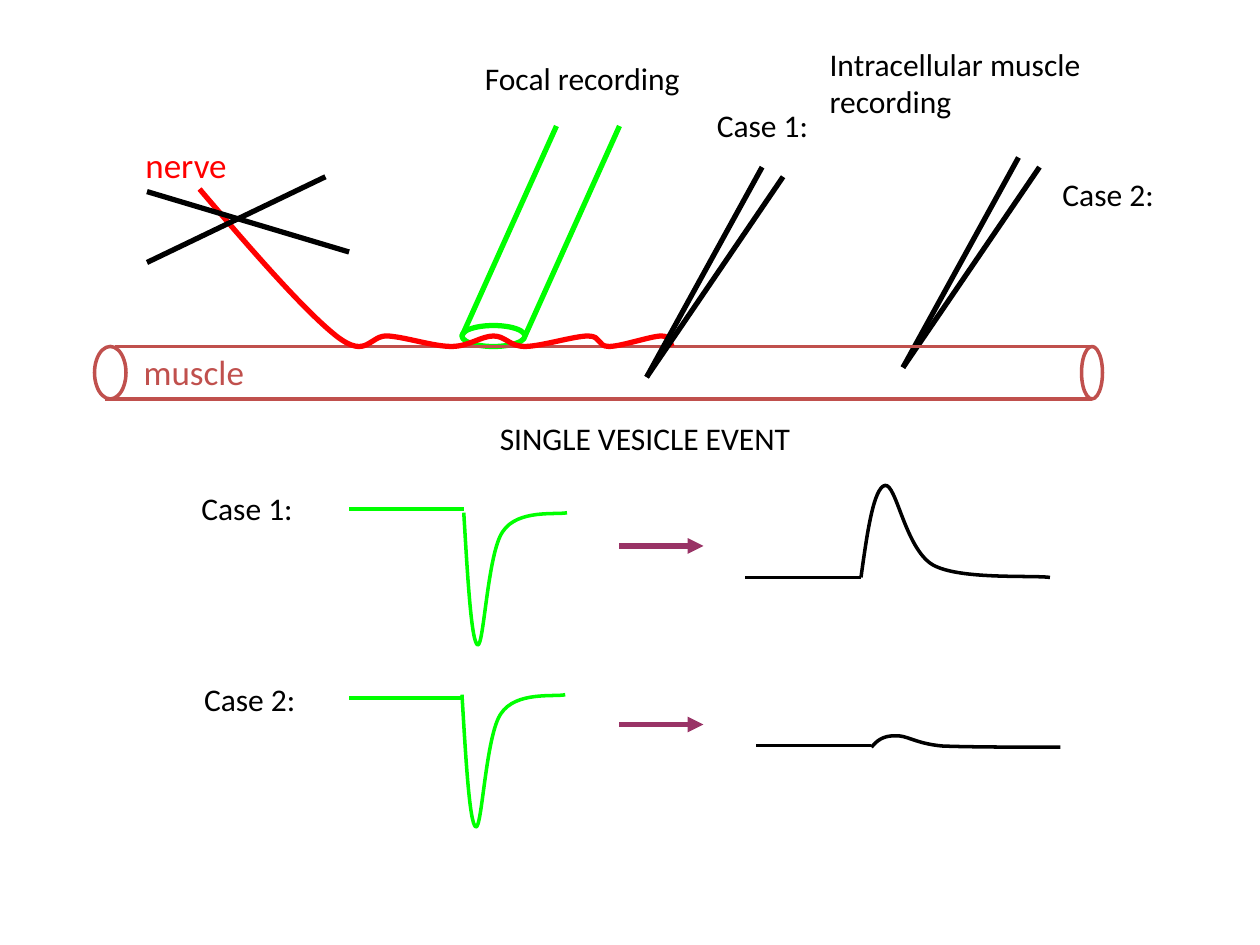
from dataclasses import dataclass

from lxml.etree import SubElement
from pptx import Presentation
from pptx.dml.color import RGBColor
from pptx.enum.shapes import MSO_CONNECTOR as Connector, MSO_SHAPE as Shape
from pptx.enum.text import MSO_AUTO_SIZE as AutoSize
from pptx.oxml.ns import qn
from pptx.slide import Slide
from pptx.util import Pt

Point = tuple[float, float]

COLORS = {
    "ink": "000000",
    "focal": "00FF00",
    "nerve": "FF0000",
    "muscle": "C0504D",
    "arrow": "993366",
}


@dataclass(frozen=True)
class Label:
    text: str
    left: float
    top: float
    width: float
    height: float = 29
    size: float = 18
    color: str = "ink"


@dataclass(frozen=True)
class Line:
    start: Point
    end: Point
    color: str = "ink"
    width: float = 3
    arrow: bool = False


@dataclass(frozen=True)
class Ellipse:
    left: float
    top: float
    width: float
    height: float
    color: str
    line_width: float


@dataclass(frozen=True)
class Curve:
    start: Point
    offsets: tuple[Point, ...]
    color: str
    width: float = 2


@dataclass(frozen=True)
class Trace:
    baseline: Point
    curve: Curve


FOCAL_SPIKE = (
    (2.2, 36.8), (4.3, 73.5), (7.9, 75.6),
    (11.5, 77), (13.6, 23), (22.3, 10.8),
    (30.9, -2.2), (53.2, 1.4), (59, 0),
)
LARGE_RESPONSE = (
    (3.6, -26), (7.2, -51), (13.7, -52.6),
    (20.2, -54), (25.2, -16.6), (41, -7.2),
    (56.2, 1.4), (97.2, -1.4), (108, 0),
)
SMALL_RESPONSE = (
    (2.9, -3.6), (6.5, -6.5), (13, -6.5),
    (20.2, -7.2), (24.5, -2.2), (40.3, -0.7),
    (56.2, 0), (96.5, 0), (108, 0),
)
NERVE_PATH = (
    (30, 35.3), (60.2, 69.8), (78.2, 84),
    (96.2, 98), (97, 83), (108, 84),
    (119.3, 85), (133.7, 90), (144, 90),
    (154, 90), (161, 84), (168, 84),
    (175, 84), (177, 90), (186, 90),
    (195, 90), (214, 84), (222, 84),
    (230, 84), (227, 90), (234, 90),
    (241, 90), (258, 84), (264, 84),
    (270, 84), (269, 89.3), (270, 90),
)

TRACES = (
    Trace((199.5, 291), Curve((265, 293), FOCAL_SPIKE, "focal")),
    Trace((199.5, 399), Curve((264, 397), FOCAL_SPIKE, "focal")),
    Trace((426, 330), Curve((492, 330), LARGE_RESPONSE, "ink")),
    Trace((432, 426), Curve((498, 427), SMALL_RESPONSE, "ink")),
)
ARROWS = tuple(Line((354, y), (402, y), "arrow", arrow=True) for y in (312, 414))
PIPETTE = (
    Ellipse(264, 186, 36, 12, "focal", 3),
    *(Line((x, 192), (x + 54, 72), "focal") for x in (300, 264)),
)
MUSCLE = (
    Ellipse(54, 198, 18, 30, "muscle", 2),
    Line((66, 198), (624, 198), "muscle", 2),
    Line((60, 228), (624, 228), "muscle", 2),
    Ellipse(618, 198, 12, 30, "muscle", 2),
)
NERVE = Curve((114, 108), NERVE_PATH, "nerve", 3)
NERVE_CUT = (Line((186, 101), (84, 150)), Line((84, 109.5), (199.5, 144)))

LABELS = (
    Label("Focal recording", 270, 30, 138),
    Label("Intracellular muscle\nrecording", 467, 22, 169, 51),
    Label("Case 1:", 402.5, 57, 76),
    Label("Case 2:", 600, 96.5, 76),
    Label("nerve", 76, 78.5, 68, 31, 20, "nerve"),
    Label("muscle", 75, 196.5, 83.5, 31, 20, "muscle"),
    Label("SINGLE VESICLE EVENT", 278.5, 236, 182),
    Label("Case 1:", 108, 276, 76),
    Label("Case 2:", 109.5, 385, 76),
)


def color_of(name: str) -> RGBColor:
    """Return the named colour."""
    return RGBColor.from_string(COLORS[name])


def draw_label(slide: Slide, label: Label) -> None:
    """Add a text box that fits its unwrapped text."""
    box = slide.shapes.add_textbox(
        Pt(label.left), Pt(label.top), Pt(label.width), Pt(label.height)
    )
    frame = box.text_frame
    frame.word_wrap = False
    frame.auto_size = AutoSize.SHAPE_TO_FIT_TEXT
    frame.text = label.text
    for paragraph in frame.paragraphs:
        paragraph.font.name = "Calibri"
        paragraph.font.size = Pt(label.size)
        paragraph.font.color.rgb = color_of(label.color)


def draw_line(slide: Slide, line: Line) -> None:
    """Add a straight connector, with an arrowhead if asked for."""
    connector = slide.shapes.add_connector(
        Connector.STRAIGHT, *(Pt(value) for value in (*line.start, *line.end))
    )
    connector.line.color.rgb = color_of(line.color)
    connector.line.width = Pt(line.width)
    properties = connector._element.spPr
    if line.arrow:
        SubElement(properties.find(qn("a:ln")), qn("a:tailEnd"), type="triangle")
    SubElement(properties, qn("a:effectLst"))


def style_outline(shape, color: str, width: float) -> None:
    """Leave a shape with only its outline."""
    shape.shadow.inherit = False
    shape.fill.background()
    shape.line.color.rgb = color_of(color)
    shape.line.width = Pt(width)


def draw_ellipse(slide: Slide, ellipse: Ellipse) -> None:
    """Add an unfilled ellipse."""
    bounds = (ellipse.left, ellipse.top, ellipse.width, ellipse.height)
    shape = slide.shapes.add_shape(Shape.OVAL, *(Pt(value) for value in bounds))
    style_outline(shape, ellipse.color, ellipse.line_width)


def draw_curve(slide: Slide, curve: Curve) -> None:
    """Add a freeform whose offsets, three by three, are cubic Bézier points."""
    left, top = curve.start
    builder = slide.shapes.build_freeform(Pt(left), Pt(top))
    builder.add_line_segments(
        [(Pt(left + x), Pt(top + y)) for x, y in curve.offsets], close=False
    )
    shape = builder.convert_to_shape()
    segments = list(shape._element.iter(qn("a:lnTo")))
    outline = segments[0].getparent()
    for index in range(0, len(segments), 3):
        bezier = SubElement(outline, qn("a:cubicBezTo"))
        for segment in segments[index:index + 3]:
            bezier.append(segment[0])
            outline.remove(segment)
    style_outline(shape, curve.color, curve.width)


def draw_trace(slide: Slide, trace: Trace) -> None:
    """Add a flat baseline followed by its response curve."""
    x, y = trace.baseline
    draw_line(slide, Line((x, y), (trace.curve.start[0], y), trace.curve.color, 2))
    draw_curve(slide, trace.curve)


def draw_electrode(slide: Slide, tip: Point) -> None:
    """Add the two sides of a sharp electrode."""
    x, y = tip
    for run, rise in ((66, 120), (78, 114.5)):
        draw_line(slide, Line((x + run, y - rise), tip))


def draw_parts(slide: Slide, parts: tuple[Line | Ellipse, ...]) -> None:
    """Add lines and ellipses in order."""
    for part in parts:
        if isinstance(part, Line):
            draw_line(slide, part)
        else:
            draw_ellipse(slide, part)


def main() -> None:
    """Build the slide and save it."""
    presentation = Presentation()
    presentation.slide_width, presentation.slide_height = Pt(720), Pt(540)
    slide = presentation.slides.add_slide(presentation.slide_layouts[6])
    for trace in TRACES:
        draw_trace(slide, trace)
    draw_electrode(slide, (516, 210))
    draw_parts(slide, PIPETTE + ARROWS + MUSCLE)
    draw_curve(slide, NERVE)
    draw_electrode(slide, (369.5, 215.5))
    draw_parts(slide, NERVE_CUT)
    for label in LABELS:
        draw_label(slide, label)
    presentation.save("out.pptx")


if __name__ == "__main__":
    main()
